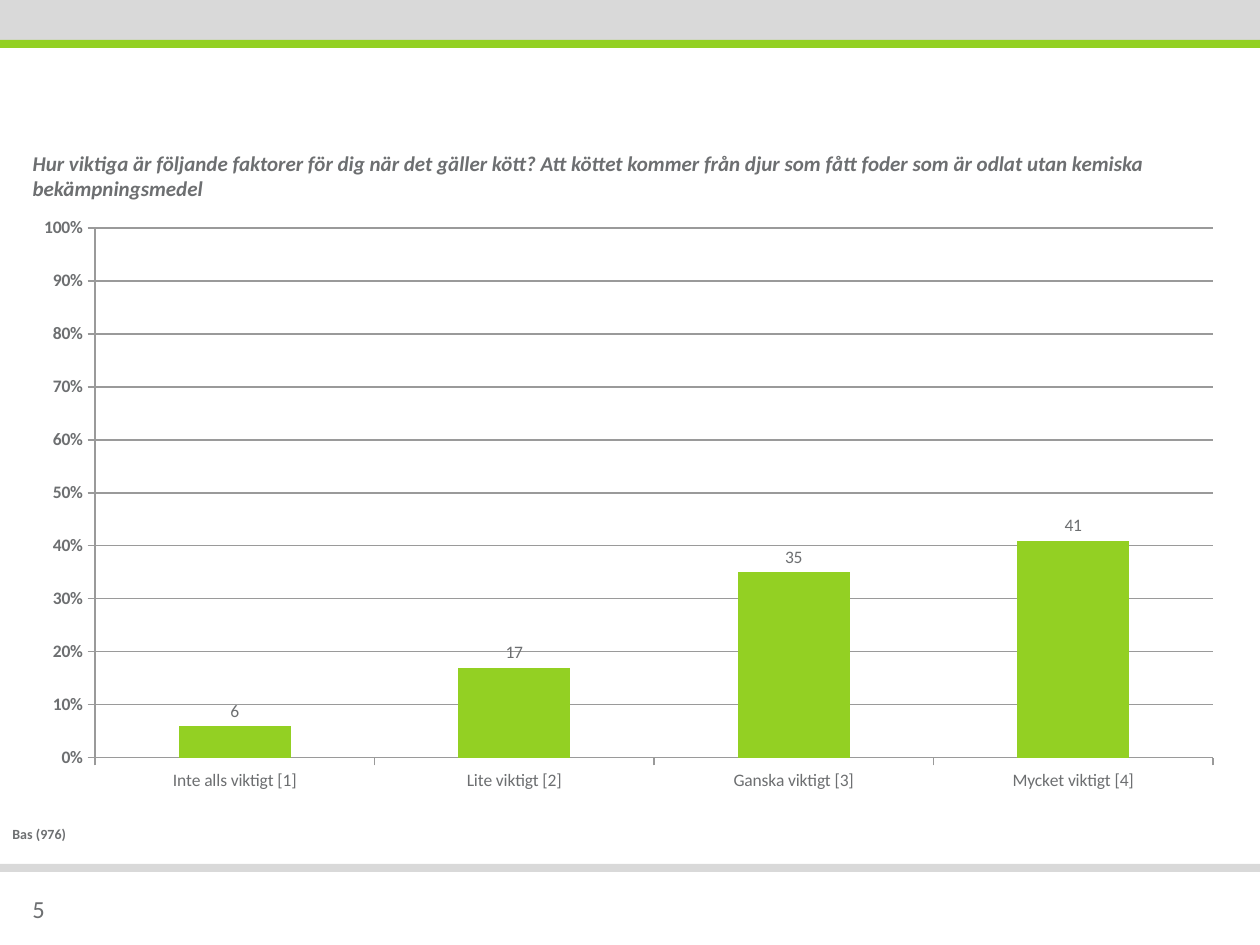
from lxml import etree
from pptx import Presentation
from pptx import util as u
from pptx.chart.data import CategoryChartData
from pptx.dml.color import RGBColor
from pptx.enum import chart as ch, shapes, text
from pptx.oxml.ns import qn

PX = u.Inches(1) / 126
WIDE, HIGH = 1260, 945
GREEN, GREY, INK, RULE = "93D023", "D9D9D9", "6D6F71", "9A9A9A"
FACE = "Calibri"


def px(*vals):
    return [round(v * PX) for v in vals]


def hue(code):
    return RGBColor.from_string(code)


def style(font, size, bold=False, italic=False):
    font.name, font.size = FACE, u.Pt(size)
    font.bold, font.italic = bold, italic
    font.color.rgb = hue(INK)


def write(shape, words, size, anchor, **look):
    frame = shape.text_frame
    frame.text = words
    frame.word_wrap = True
    frame.auto_size = text.MSO_AUTO_SIZE.NONE
    frame.vertical_anchor = anchor
    para = frame.paragraphs[0]
    para.alignment = text.PP_ALIGN.LEFT
    style(para.font, size, **look)


def add_band(slide, top, high, color):
    band = slide.shapes.add_shape(shapes.MSO_SHAPE.RECTANGLE,
                                  *px(0, top, WIDE, high))
    band.shadow.inherit = False
    band.fill.solid()
    band.fill.fore_color.rgb = hue(color)
    band.line.fill.background()


def add_title(slide, box, words):
    title = slide.shapes.title
    title.left, title.top, title.width, title.height = px(*box)
    write(title, words, 12, text.MSO_ANCHOR.TOP, bold=True, italic=True)


def add_note(slide, box, words, size, anchor, **look):
    write(slide.shapes.add_textbox(*px(*box)), words, size, anchor, **look)


def fix_plot(chart, box, plot):
    """Pin the inner plot area, given in px like the chart's box."""
    area = chart._chartSpace.chart.plotArea
    for old in area.findall(qn("c:layout")):
        area.remove(old)
    layout = etree.Element(qn("c:layout"))
    area.insert(0, layout)
    manual = etree.SubElement(layout, qn("c:manualLayout"))
    left, top, wide, high = box
    x, y, w, h = plot
    parts = {"layoutTarget": "inner", "xMode": "edge", "yMode": "edge",
             "x": (x - left) / wide, "y": (y - top) / high,
             "w": w / wide, "h": h / high}
    for tag, val in parts.items():
        etree.SubElement(manual, qn("c:" + tag)).set("val", str(val))


def add_bars(slide, box, plot, answers):
    data = CategoryChartData()
    data.categories = list(answers)
    data.add_series("Series 1", list(answers.values()))
    chart = slide.shapes.add_chart(ch.XL_CHART_TYPE.COLUMN_CLUSTERED,
                                   *px(*box), data).chart
    style(chart.font, 18)
    chart.has_legend = chart.has_title = False
    fix_plot(chart, box, plot)

    for axis, bold in ((chart.category_axis, False), (chart.value_axis, True)):
        style(axis.tick_labels.font, 10, bold=bold)
        axis.major_tick_mark = ch.XL_TICK_MARK.OUTSIDE
        axis.format.line.color.rgb = hue(RULE)
    scale = chart.value_axis
    scale.minimum_scale, scale.maximum_scale, scale.major_unit = 0, 100, 10
    scale.tick_labels.number_format = '0"%"'
    scale.tick_labels.number_format_is_linked = False
    scale.has_major_gridlines = True
    scale.major_gridlines.format.line.color.rgb = hue(RULE)

    bars = chart.plots[0]
    bars.gap_width, bars.vary_by_categories = 150, False
    fill = bars.series[0].format.fill
    fill.solid()
    fill.fore_color.rgb = hue(GREEN)
    bars.has_data_labels = True
    labels = bars.data_labels
    labels.show_value = True
    labels.position = ch.XL_LABEL_POSITION.OUTSIDE_END
    style(labels.font, 10)


def main():
    deck = Presentation()
    deck.slide_width, deck.slide_height = px(WIDE, HIGH)
    slide = deck.slides.add_slide(deck.slide_layouts[5])
    for top, high, color in ((0, 40, GREY), (864, 8, GREY), (40, 8, GREEN)):
        add_band(slide, top, high, color)
    add_note(slide, (20, 876, 97, 66), "5", 14, text.MSO_ANCHOR.MIDDLE)
    add_bars(slide, (20, 207, 1218, 595), (95, 228, 1118, 530),
             {"Inte alls viktigt [1]": 6, "Lite viktigt [2]": 17,
              "Ganska viktigt [3]": 35, "Mycket viktigt [4]": 41})
    add_title(slide, (20, 144, 1221, 72),
              "Hur viktiga är följande faktorer för dig när det gäller kött? "
              "Att köttet kommer från djur som fått foder som är odlat utan "
              "kemiska bekämpningsmedel")
    add_note(slide, (0, 819, WIDE, 30), "Bas (976)", 8, text.MSO_ANCHOR.TOP,
             bold=True)
    deck.save("out.pptx")


if __name__ == "__main__":
    main()
